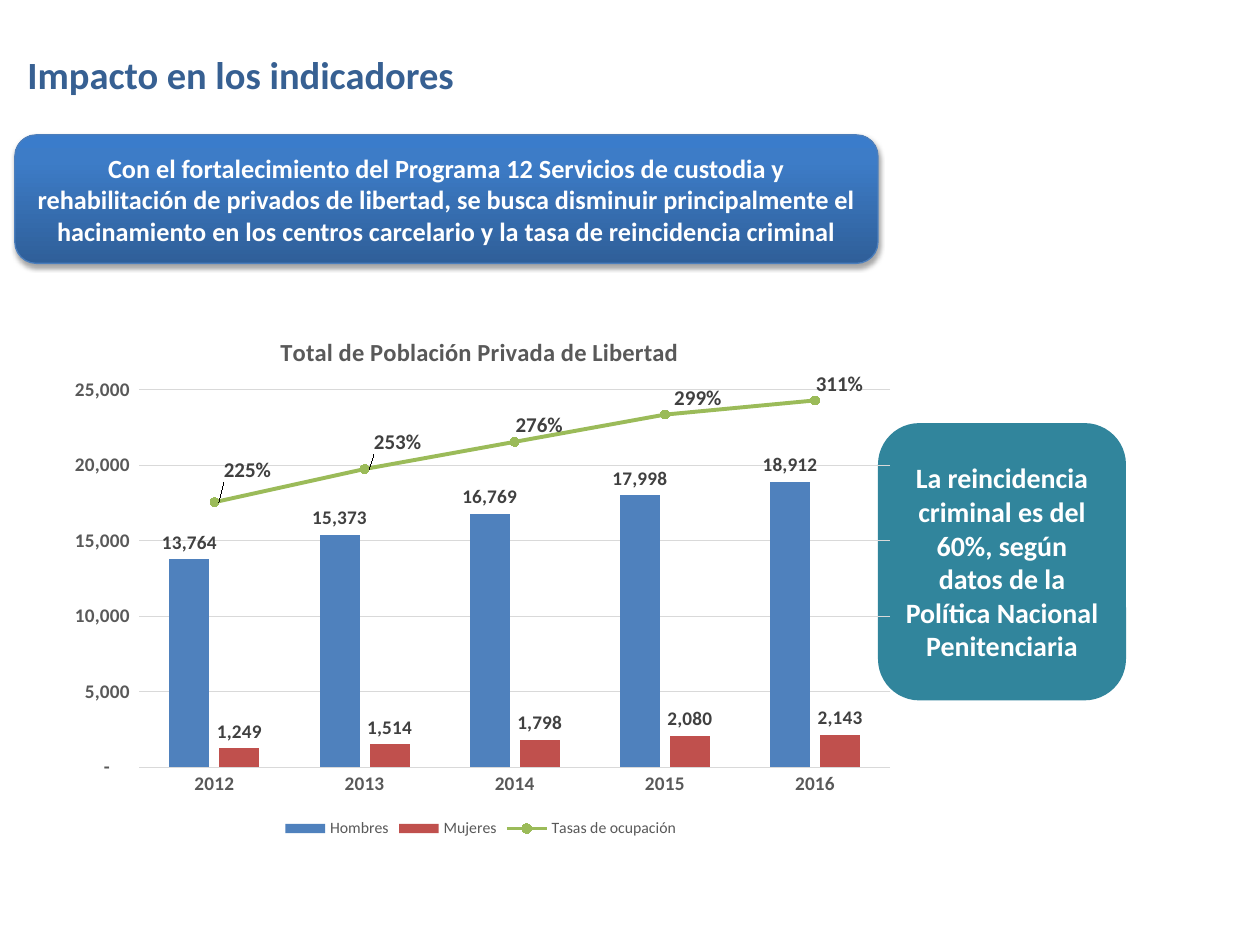
"""Build a slide on prison population indicators with a combined chart."""
import pptx
import pptx.chart.data
import pptx.dml.color
import pptx.enum.chart
import pptx.enum.shapes
import pptx.enum.text
import pptx.oxml
import pptx.oxml.ns
import pptx.util

Cm, Pt = pptx.util.Cm, pptx.util.Pt
RGBColor = pptx.dml.color.RGBColor
PP_ALIGN = pptx.enum.text.PP_ALIGN
MSO_ANCHOR = pptx.enum.text.MSO_ANCHOR
XL_TICK = pptx.enum.chart.XL_TICK_MARK
XL_POS = pptx.enum.chart.XL_LABEL_POSITION

WHITE = RGBColor(0xFF, 0xFF, 0xFF)
NAVY = RGBColor(0x37, 0x60, 0x92)
TEAL = RGBColor(0x31, 0x85, 0x9C)
EDGE = RGBColor(0x4B, 0x7E, 0xBC)
BLUE = RGBColor(0x4F, 0x81, 0xBD)
RED = RGBColor(0xC0, 0x50, 0x4D)
GREEN = RGBColor(0x9B, 0xBB, 0x59)
GRAY = RGBColor(0x59, 0x59, 0x59)
DARK = RGBColor(0x40, 0x40, 0x40)
LIGHT = RGBColor(0xD9, 0xD9, 0xD9)
BLACK = RGBColor(0, 0, 0)
GRADIENT = [(0, "2F5F99"), (80, "3D7CC7"), (100, "3A7CCB")]

TITLE = "Impacto en los indicadores"
GOAL = ("Con el fortalecimiento del Programa 12 Servicios de custodia y rehabilitación "
        "de privados de libertad, se busca disminuir principalmente el hacinamiento en "
        "los centros carcelario y la tasa de reincidencia criminal")
RELAPSE = ("La reincidencia criminal es del 60%, según datos de la Política Nacional "
           "Penitenciaria")
CHART_TITLE = "Total de Población Privada de Libertad"
YEARS = ["2012", "2013", "2014", "2015", "2016"]
SERIES = [
    ("Hombres", [13764, 15373, 16769, 17998, 18912], "#,##0", BLUE),
    ("Mujeres", [1249, 1514, 1798, 2080, 2143], "#,##0", RED),
    ("Tasas de ocupación", [2.25, 2.53, 2.76, 2.99, 3.11], "0%", GREEN),
]
RATE_SHIFTS = [(0, -0.06), (0, -0.05), (-0.01, -0.03), (0, -0.03), (-0.01, -0.03)]
AXIS_FORMAT = '_-* #,##0_-;\\-* #,##0_-;_-* "-"??_-;_-@_'


def xml(tag, inner="", attrs=""):
    ns = pptx.oxml.ns.nsdecls("a", "c")
    return pptx.oxml.parse_xml(f"<{tag} {ns} {attrs}>{inner}</{tag}>")


def set_font(font, size, color, bold=False):
    font.name, font.size, font.bold = "Calibri", Pt(size), bold
    font.color.rgb = color


def write(tf, text, size=16, color=WHITE, align=PP_ALIGN.CENTER, anchor=MSO_ANCHOR.MIDDLE):
    tf.word_wrap = True
    tf.vertical_anchor = anchor
    p = tf.paragraphs[0]
    p.alignment = align
    r = p.add_run()
    r.text = text
    set_font(r.font, size, color, True)


def add_box(slide, text, size, left, top, width, height):
    sp = slide.shapes.add_shape(pptx.enum.shapes.MSO_SHAPE.ROUNDED_RECTANGLE,
                                Cm(left), Cm(top), Cm(width), Cm(height))
    sp.shadow.inherit = False
    sp.fill.solid()
    sp.fill.fore_color.rgb = TEAL
    sp.line.fill.background()
    write(sp.text_frame, text, size)
    return sp


def style_goal(sp):
    sp.line.color.rgb = EDGE
    sp.line.width = Pt(0.75)
    pr = sp._element.spPr
    stops = "".join(f'<a:gs pos="{pos * 1000}"><a:srgbClr val="{color}"/></a:gs>'
                    for pos, color in GRADIENT)
    solid = pr.find(pptx.oxml.ns.qn("a:solidFill"))
    pr.replace(solid, xml("a:gradFill", f'<a:gsLst>{stops}</a:gsLst>'
                          '<a:lin ang="16200000" scaled="0"/>', 'rotWithShape="1"'))
    effects = pr.find(pptx.oxml.ns.qn("a:effectLst"))
    effects.append(xml("a:outerShdw", '<a:srgbClr val="000000"><a:alpha val="35000"/></a:srgbClr>',
                       f'blurRad="{Pt(3.1)}" dist="{Pt(1.8)}" dir="5400000" rotWithShape="0"'))


def layout(x, y, w=None, h=None, inner=False, edge=True):
    parts = '<c:layoutTarget val="inner"/>' if inner else ""
    if edge:
        parts += '<c:xMode val="edge"/><c:yMode val="edge"/>'
    for name, value in zip("xywh", (x, y, w, h)):
        if value is not None:
            parts += f'<c:{name} val="{value}"/>'
    return xml("c:layout", f"<c:manualLayout>{parts}</c:manualLayout>")


def set_layout(parent, new, index):
    for old in parent.findall(pptx.oxml.ns.qn("c:layout")):
        parent.remove(old)
    parent.insert(index, new)


def move_rates_to_line(chart):
    area = chart._chartSpace.chart.plotArea
    bar = area.find(pptx.oxml.ns.qn("c:barChart"))
    ser = bar.findall(pptx.oxml.ns.qn("c:ser"))[-1]
    for el in ser.findall(pptx.oxml.ns.qn("c:invertIfNegative")):
        ser.remove(el)
    line = xml("c:lineChart", '<c:grouping val="stacked"/><c:varyColors val="0"/>'
               '<c:marker val="1"/><c:axId val="5001"/><c:axId val="5002"/>')
    line.insert(2, ser)
    bar.addnext(line)
    hidden = xml("c:catAx", '<c:axId val="5001"/><c:scaling><c:orientation val="minMax"/></c:scaling>'
                 '<c:delete val="1"/><c:axPos val="b"/><c:majorTickMark val="none"/>'
                 '<c:minorTickMark val="none"/><c:tickLblPos val="nextTo"/>'
                 '<c:crossAx val="5002"/><c:crosses val="autoZero"/>')
    right = xml("c:valAx", '<c:axId val="5002"/><c:scaling><c:orientation val="minMax"/>'
                '<c:max val="3.2"/><c:min val="0.01"/></c:scaling><c:delete val="0"/>'
                '<c:axPos val="r"/><c:numFmt formatCode="0%" sourceLinked="0"/>'
                '<c:majorTickMark val="none"/><c:minorTickMark val="none"/>'
                '<c:tickLblPos val="none"/><c:spPr><a:ln><a:noFill/></a:ln></c:spPr>'
                '<c:crossAx val="5001"/><c:crosses val="max"/>')
    left = area.find(pptx.oxml.ns.qn("c:valAx"))
    left.addnext(hidden)
    hidden.addnext(right)
    set_layout(area, layout(0.1, 0.16, 0.88, 0.7, inner=True), 0)


def style_rates(s):
    s.smooth = False
    s.format.line.color.rgb = GREEN
    s.format.line.width = Pt(2.25)
    s.marker.style = pptx.enum.chart.XL_MARKER_STYLE.CIRCLE
    s.marker.size = 5
    s.marker.format.fill.solid()
    s.marker.format.fill.fore_color.rgb = GREEN
    s.marker.format.line.color.rgb = GREEN
    for i, shift in enumerate(RATE_SHIFTS):
        label = s.points[i].data_label
        label.position = XL_POS.RIGHT
        set_font(label.font, 12, DARK, True)
    for dlbl, shift in zip(s._element.xpath("c:dLbls/c:dLbl"), RATE_SHIFTS):
        set_layout(dlbl, layout(*shift, edge=False), 1)
        dlbl.insert(2, xml("c:numFmt", attrs='formatCode="0%" sourceLinked="0"'))


def style_axes(chart):
    for axis in (chart.category_axis, chart.value_axis):
        axis.major_tick_mark = axis.minor_tick_mark = XL_TICK.NONE
        set_font(axis.tick_labels.font, 11, GRAY, True)
    values = chart.value_axis
    values.minimum_scale, values.maximum_scale, values.major_unit = 0, 25000, 5000
    values.tick_labels.number_format = AXIS_FORMAT
    values.tick_labels.number_format_is_linked = False
    values.format.line.fill.background()
    for part in (chart.category_axis, values.major_gridlines):
        part.format.line.color.rgb = LIGHT
        part.format.line.width = Pt(0.75)


def add_population_chart(slide):
    data = pptx.chart.data.CategoryChartData()
    data.categories = YEARS
    for name, numbers, fmt, _ in SERIES:
        data.add_series(name, numbers, fmt)
    chart = slide.shapes.add_chart(pptx.enum.chart.XL_CHART_TYPE.COLUMN_CLUSTERED,
                                   Cm(1.09), Cm(6.12), Cm(17.2), Cm(10.87), data).chart
    set_font(chart.font, 10, BLACK)
    chart.has_title = True
    write(chart.chart_title.text_frame, CHART_TITLE, 14, GRAY)
    set_layout(chart.chart_title._element, layout(0.26, 0.05), 1)
    chart.has_legend = True
    chart.legend.position = pptx.enum.chart.XL_LEGEND_POSITION.BOTTOM
    chart.legend.include_in_layout = False
    set_font(chart.legend.font, 9, GRAY)
    style_axes(chart)
    move_rates_to_line(chart)
    columns, rates = chart.plots
    columns.gap_width, columns.overlap, columns.vary_by_categories = 150, -25, False
    for s, (_, _, fmt, color) in zip([*columns.series, *rates.series], SERIES):
        is_rate = fmt == "0%"
        labels = s.data_labels
        labels.show_value = True
        labels.number_format, labels.number_format_is_linked = fmt, False
        labels.position = XL_POS.RIGHT if is_rate else XL_POS.OUTSIDE_END
        set_font(labels.font, 12 if is_rate else 11, DARK, True)
        if is_rate:
            style_rates(s)
        else:
            s.format.fill.solid()
            s.format.fill.fore_color.rgb = color


def main():
    prs = pptx.Presentation()
    prs.slide_width, prs.slide_height = Cm(25.4), Cm(19.05)
    slide = prs.slides.add_slide(prs.slide_layouts[5])
    title = slide.shapes.title
    title.left, title.top, title.width, title.height = Cm(0.3), Cm(0.91), Cm(12.7), Cm(1.19)
    write(title.text_frame, TITLE, 22, NAVY, PP_ALIGN.JUSTIFY, MSO_ANCHOR.TOP)
    add_box(slide, RELAPSE, 16, 17.7, 8.53, 5, 5.59)
    style_goal(add_box(slide, GOAL, 15, 0.3, 2.72, 17.4, 2.59))
    add_population_chart(slide)
    prs.save("out.pptx")


if __name__ == "__main__":
    main()
